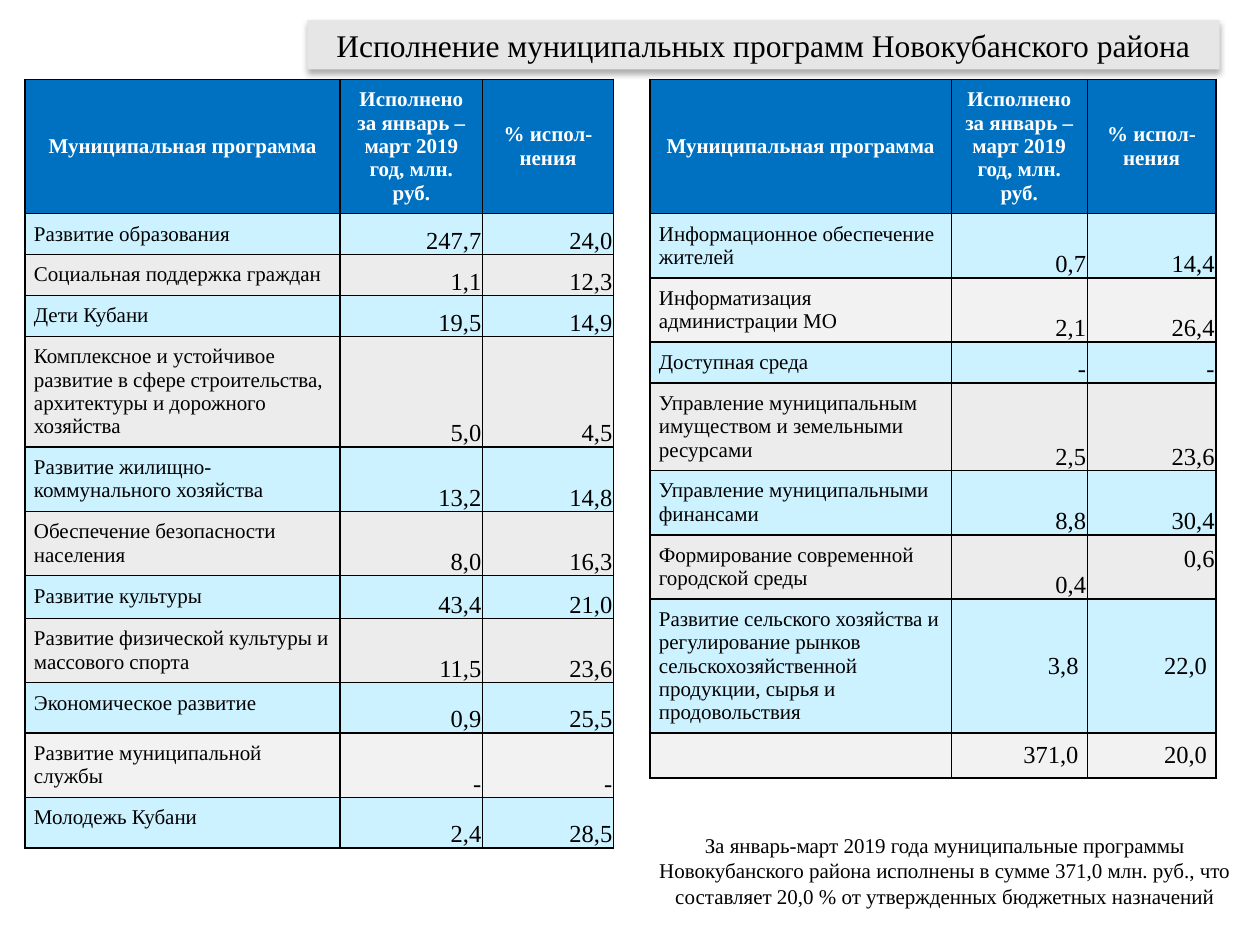
import pptx
import pptx.util
import pptx.dml.color
import pptx.enum.shapes
import pptx.enum.text
import pptx.oxml

Inches, Pt = pptx.util.Inches, pptx.util.Pt
ALIGN = pptx.enum.text.PP_ALIGN
ANCHOR = pptx.enum.text.MSO_ANCHOR
NAMESPACE = 'xmlns:a="http://schemas.openxmlformats.org/drawingml/2006/main"'
FONT = "Times New Roman"
COLORS = {
    "black": "000000", "white": "FFFFFF", "title": "E6E6E6", "header": "0070C0",
    "blue": "CDF2FF", "gray": "ECECEC", "light": "F2F2F2",
}

# Content
TITLE = "Исполнение муниципальных программ Новокубанского района"
NOTE = ("За январь-март 2019 года муниципальные программы Новокубанского района "
        "исполнены в сумме 371,0 млн. руб., что составляет 20,0 % от утвержденных "
        "бюджетных назначений")
HEADER = ("Муниципальная программа", "Исполнено за январь – март 2019 год, млн. руб.",
          "% испол-нения")
HEADER_HEIGHT = 1.06

# Rows: program, million roubles, percent, row height
LEFT_ROWS = [
    ("Развитие образования", "247,7", "24,0", 0.32),
    ("Социальная поддержка граждан", "1,1", "12,3", 0.32),
    ("Дети Кубани", "19,5", "14,9", 0.32),
    ("Комплексное и устойчивое развитие в сфере строительства, архитектуры "
     "и дорожного хозяйства", "5,0", "4,5", 0.88),
    ("Развитие жилищно-коммунального хозяйства", "13,2", "14,8", 0.51),
    ("Обеспечение безопасности населения", "8,0", "16,3", 0.51),
    ("Развитие культуры", "43,4", "21,0", 0.34),
    ("Развитие физической культуры и массового спорта", "11,5", "23,6", 0.51),
    ("Экономическое развитие", "0,9", "25,5", 0.4),
    ("Развитие муниципальной службы", "-", "-", 0.51),
    ("Молодежь Кубани", "2,4", "28,5", 0.4),
]
RIGHT_ROWS = [
    ("Информационное обеспечение жителей", "0,7", "14,4", 0.5),
    ("Информатизация администрации МО", "2,1", "26,4", 0.51),
    ("Доступная среда", "-", "-", 0.32),
    ("Управление муниципальным имуществом и земельными ресурсами", "2,5", "23,6", 0.69),
    ("Управление муниципальными финансами", "8,8", "30,4", 0.5),
    ("Формирование современной городской среды", "0,4", "0,6", 0.51),
    ("Развитие сельского хозяйства и регулирование рынков сельскохозяйственной "
     "продукции, сырья и продовольствия", "3,8", "22,0", 1.06),
    ("", "371,0", "20,0", 0.35),
]
TABLES = [
    {"left": 5.16, "columns": (2.39, 1.08, 1.02), "rows": RIGHT_ROWS,
     "light": (2, 8), "centered": (7, 8), "raised": (6, 2)},
    {"left": 0.2, "columns": (2.5, 1.13, 1.04), "rows": LEFT_ROWS,
     "light": (10,), "centered": (), "raised": None},
]
TABLE_TOP = 0.63


def rgb(name):
    return pptx.dml.color.RGBColor.from_string(COLORS[name])


def write_text(frame, text, size=12, color="black", bold=False, align=ALIGN.LEFT):
    paragraph = frame.paragraphs[0]
    paragraph.alignment = align
    font = paragraph.add_run().font if text else paragraph.font
    if text:
        paragraph.runs[0].text = text
    font.name, font.size, font.bold = FONT, Pt(size), bold
    font.color.rgb = rgb(color)


def format_cell(cell, fill, anchor, margins):
    cell.vertical_anchor = anchor
    (cell.margin_left, cell.margin_top,
     cell.margin_right, cell.margin_bottom) = map(Inches, margins)
    properties = cell._tc.get_or_add_tcPr()
    for side in ("lnL", "lnR", "lnT", "lnB"):
        properties.append(pptx.oxml.parse_xml(
            f'<a:{side} {NAMESPACE} w="12700"><a:solidFill>'
            f'<a:srgbClr val="{COLORS["black"]}"/></a:solidFill></a:{side}>'))
    cell.fill.solid()
    cell.fill.fore_color.rgb = rgb(fill)


def add_program_table(slide, data):
    heights = [HEADER_HEIGHT] + [row[3] for row in data["rows"]]
    table = slide.shapes.add_table(
        len(heights), len(HEADER), Inches(data["left"]), Inches(TABLE_TOP),
        Inches(sum(data["columns"])), Inches(sum(heights))).table
    for column, width in zip(table.columns, data["columns"]):
        column.width = Inches(width)
    for row, height in zip(table.rows, heights):
        row.height = Inches(height)

    padded = (0.07,) * 4
    for column, text in enumerate(HEADER):
        cell = table.cell(0, column)
        format_cell(cell, "header", ANCHOR.MIDDLE, padded)
        write_text(cell.text_frame, text, color="white", bold=True, align=ALIGN.CENTER)

    for row, values in enumerate(data["rows"], start=1):
        fill = "light" if row in data["light"] else "blue" if row % 2 else "gray"
        for column, text in enumerate(values[:3]):
            cell = table.cell(row, column)
            if column == 0:
                format_cell(cell, fill, ANCHOR.TOP, padded)
                write_text(cell.text_frame, text)
                continue
            if row in data["centered"]:
                format_cell(cell, fill, ANCHOR.MIDDLE, padded)
            else:
                bottom = 0.21 if (row, column) == data["raised"] else 0
                format_cell(cell, fill, ANCHOR.BOTTOM, (0.01, 0.01, 0.01, bottom))
            write_text(cell.text_frame, text, size=14, align=ALIGN.RIGHT)


def main():
    presentation = pptx.Presentation()
    presentation.slide_width, presentation.slide_height = Inches(10), Inches(7.5)
    slide = presentation.slides.add_slide(presentation.slide_layouts[6])

    # Title bar with a soft shadow
    title = slide.shapes.add_shape(
        pptx.enum.shapes.MSO_SHAPE.RECTANGLE,
        Inches(2.44), Inches(0.16), Inches(7.24), Inches(0.39))
    title.fill.solid()
    title.fill.fore_color.rgb = rgb("title")
    title.line.fill.background()
    title._element.spPr.append(pptx.oxml.parse_xml(
        f'<a:effectLst {NAMESPACE}><a:outerShdw blurRad="44450" dist="27940" '
        f'dir="5400000" algn="ctr" rotWithShape="0"><a:srgbClr val="{COLORS["black"]}">'
        '<a:alpha val="32000"/></a:srgbClr></a:outerShdw></a:effectLst>'))
    title.text_frame.word_wrap = True
    title.text_frame.vertical_anchor = ANCHOR.MIDDLE
    write_text(title.text_frame, TITLE, size=18, align=ALIGN.CENTER)

    # Program tables
    for data in TABLES:
        add_program_table(slide, data)

    # Summary note
    note = slide.shapes.add_textbox(Inches(5.13), Inches(6.56), Inches(4.74), Inches(0.71))
    note.text_frame.word_wrap = True
    note.text_frame.auto_size = pptx.enum.text.MSO_AUTO_SIZE.SHAPE_TO_FIT_TEXT
    write_text(note.text_frame, NOTE, align=ALIGN.CENTER)

    presentation.save("out.pptx")


if __name__ == "__main__":
    main()
